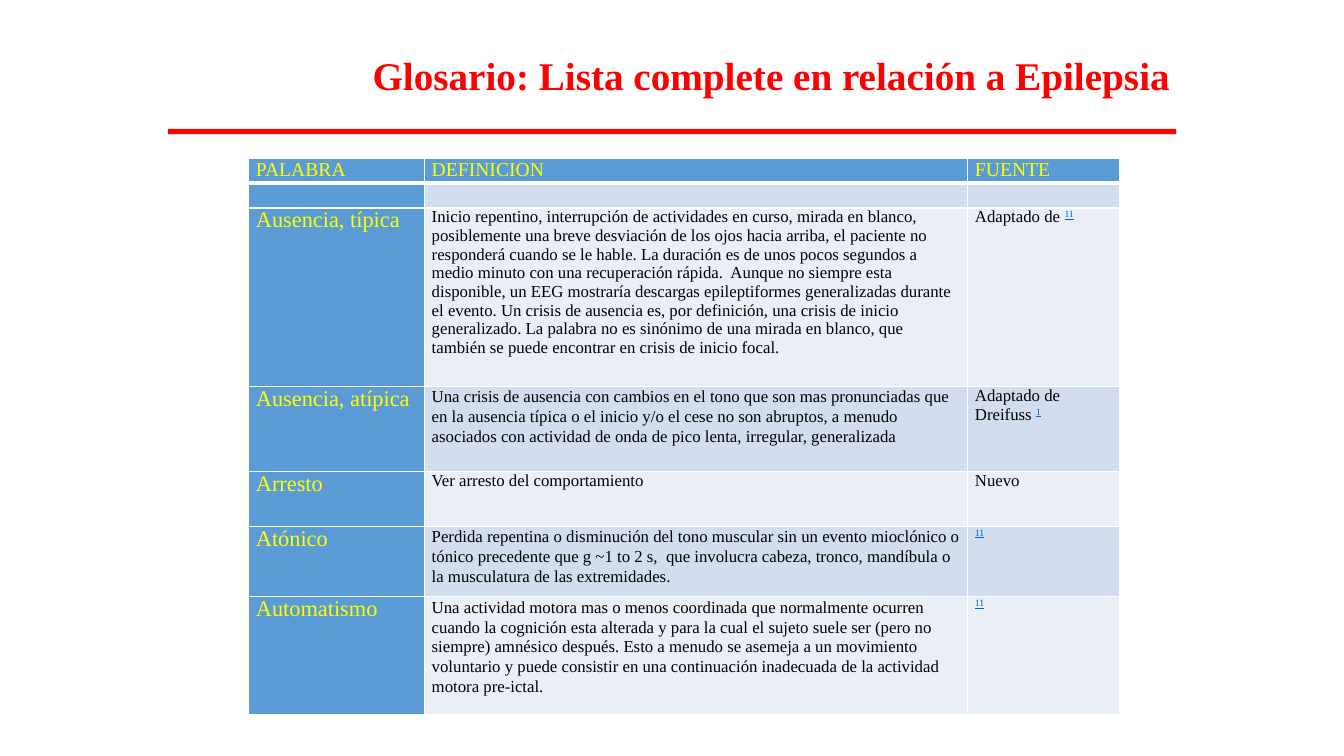
from lxml.etree import SubElement as Sub
from pptx import Presentation
from pptx.dml.color import RGBColor as RGB
from pptx.enum.shapes import MSO_SHAPE as Shape
from pptx.oxml.ns import qn
from pptx.util import Cm, Pt

RED = RGB(0xFF, 0, 0)
YELLOW = RGB(0xFF, 0xFF, 0)
BLACK = RGB(0, 0, 0)
WHITE = RGB(0xFF, 0xFF, 0xFF)
LINK = RGB(0x05, 0x63, 0xC1)
BLUE = RGB(0x5B, 0x9B, 0xD5)
BANDS = RGB(0xEA, 0xEF, 0xF7), RGB(0xD2, 0xDE, 0xEF)

HEADS = "PALABRA", "DEFINICION", "FUENTE"
COLS = 4.43, 13.69, 3.83
LOOSE = {"line": 1.07, "after": 8}
ROWS = [
    (4.5, "Ausencia, típica",
     "Inicio repentino, interrupción de actividades en curso, mirada en blanco, "
     "posiblemente una breve desviación de los ojos hacia arriba, el paciente no "
     "responderá cuando se le hable. La duración es de unos pocos segundos a "
     "medio minuto con una recuperación rápida.  Aunque no siempre esta "
     "disponible, un EEG mostraría descargas epileptiformes generalizadas durante "
     "el evento. Un crisis de ausencia es, por definición, una crisis de inicio "
     "generalizado. La palabra no es sinónimo de una mirada en blanco, que "
     "también se puede encontrar en crisis de inicio focal.",
     "Adaptado de ", "11", {}),
    (2.15, "Ausencia, atípica",
     "Una crisis de ausencia con cambios en el tono que son mas pronunciadas que "
     "en la ausencia típica o el inicio y/o el cese no son abruptos, a menudo "
     "asociados con actividad de onda de pico lenta, irregular, generalizada",
     "Adaptado de Dreifuss ", "1", LOOSE),
    (1.37, "Arresto", "Ver arresto del comportamiento", "Nuevo", "", {}),
    (1.78, "Atónico",
     "Perdida repentina o disminución del tono muscular sin un evento mioclónico "
     "o tónico precedente que g ~1 to 2 s,  que involucra cabeza, tronco, mandíbula "
     "o la musculatura de las extremidades.",
     "", "11", LOOSE),
    (2.97, "Automatismo",
     "Una actividad motora mas o menos coordinada que normalmente ocurren "
     "cuando la cognición esta alterada y para la cual el sujeto suele ser (pero no "
     "siempre) amnésico después. Esto a menudo se asemeja a un movimiento "
     "voluntario y puede consistir en una continuación inadecuada de la actividad "
     "motora pre-ictal.",
     "", "11", LOOSE),
]


def write(frame, text, size=12, color=BLACK, bold=False, sup=False, line=None, after=None):
    """Append a formatted run to the first paragraph of a text frame."""
    para = frame.paragraphs[0]
    if line:
        para.line_spacing = line
        para.space_after = Pt(after)
    run = para.add_run()
    run.text = text
    font = run.font
    font.name, font.size, font.bold = "Times New Roman", Pt(size), bold
    font.color.rgb = color
    if sup:
        font.underline = True
        run._r.get_or_add_rPr().set("baseline", "30000")


def title(slide, left, top, width):
    """Place the heading and the red rule below it."""
    box = slide.shapes.add_textbox(Cm(left + 4.9), Cm(top), Cm(width - 4.6), Cm(1.45))
    box.text_frame.word_wrap = True
    write(box.text_frame, "Glosario: Lista complete en relación a Epilepsia",
          size=28, color=RED, bold=True)
    rule = slide.shapes.add_shape(Shape.RECTANGLE, Cm(left), Cm(top + 2.08), Cm(width), Cm(0.13))
    rule.shadow.inherit = False
    rule.fill.solid()
    rule.fill.fore_color.rgb = RED
    rule.line.fill.background()


def dress(cell, fill, top=1, base=1):
    """Set the margins, white borders and fill of a cell."""
    cell.margin_left = cell.margin_right = Cm(0.18)
    cell.margin_top = cell.margin_bottom = 0
    props = cell._tc.get_or_add_tcPr()
    for side, wide in zip("LRTB", (1, 1, top, base)):
        edge = Sub(props, qn(f"a:ln{side}"), w=str(Pt(wide)))
        solid = Sub(edge, qn("a:solidFill"))
        Sub(solid, qn("a:srgbClr"), val=str(WHITE))
    cell.fill.solid()
    cell.fill.fore_color.rgb = fill


def glossary(slide, left, top):
    """Place the table of words, definitions and sources."""
    highs = [0.62, 0.62] + [row[0] for row in ROWS]
    table = slide.shapes.add_table(len(highs), len(COLS), Cm(left), Cm(top),
                                   Cm(sum(COLS)), Cm(sum(highs))).table
    for col, wide in zip(table.columns, COLS):
        col.width = Cm(wide)
    for row, high in zip(table.rows, highs):
        row.height = Cm(high)
    for num, row in enumerate(table.rows):
        for col, cell in enumerate(row.cells):
            fill = BLUE if num == 0 or col == 0 else BANDS[num % 2]
            dress(cell, fill, top=3 if num == 1 else 1, base=3 if num == 0 else 1)
    for col, head in enumerate(HEADS):
        write(table.cell(0, col).text_frame, head, size=14, color=YELLOW)
        blank = table.cell(1, col).text_frame.paragraphs[0]
        Sub(blank._p, qn("a:endParaRPr"), sz="1200")
    for num, (_, word, text, source, note, space) in enumerate(ROWS, 2):
        first, mid, last = [table.cell(num, col).text_frame for col in range(3)]
        write(first, word, size=16, color=YELLOW)
        write(mid, text, **space)
        if source:
            write(last, source)
        if note:
            write(last, note, color=LINK, sup=True)


def main():
    """Build and save the slide."""
    deck = Presentation()
    deck.slide_width, deck.slide_height = Cm(33.87), Cm(19.05)
    slide = deck.slides.add_slide(deck.slide_layouts[6])
    title(slide, 4.24, 1.17, 25.4)
    glossary(slide, 6.27, 4)
    deck.save("out.pptx")


if __name__ == "__main__":
    main()
